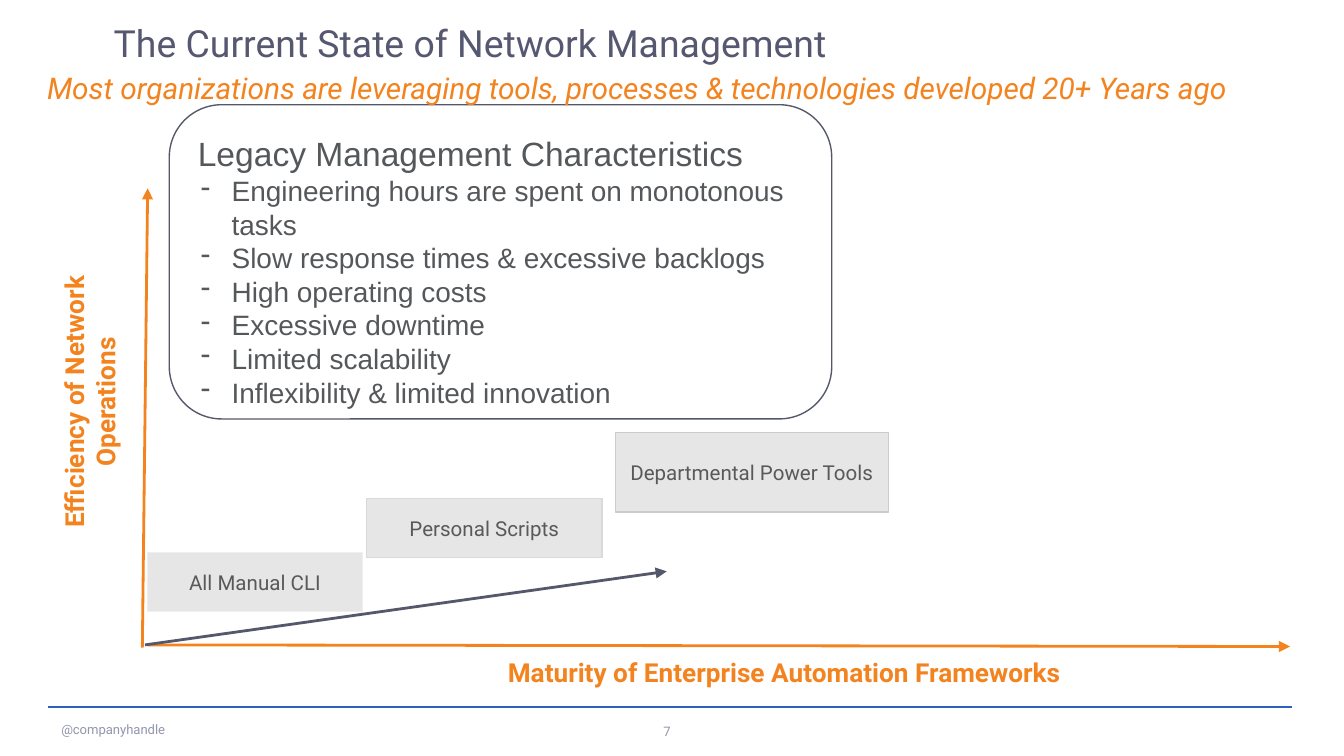
from dataclasses import dataclass

from lxml.etree import SubElement
from pptx import Presentation
from pptx.dml.color import RGBColor
from pptx.enum.shapes import MSO_CONNECTOR as Connector, MSO_SHAPE as Shape
from pptx.enum.text import MSO_ANCHOR as Anchor, PP_ALIGN as Align
from pptx.oxml.ns import qn
from pptx.util import Cm, Pt


@dataclass(frozen=True)
class Theme:
    heading_font: str = "Roboto"
    list_font: str = "Arial"
    slate: str = "55586A"
    title: str = "555870"
    orange: str = "F3831E"
    rule: str = "2E60BD"
    footer: str = "9296AE"
    stage_fill: str = "E7E6E6"
    stage_text: str = "595959"
    list_text: str = "55585B"
    title_size: float = 20
    subtitle_size: float = 16
    list_title_size: float = 18
    list_size: float = 15
    axis_size: float = 14
    stage_size: float = 11
    footer_size: float = 7


THEME = Theme()

STAGES = [
    ("All Manual CLI", (2.79, 10.44, 4.06, 1.12), "EFEFEF"),
    ("Personal Scripts", (6.93, 9.42, 4.45, 1.12), "D9D9D9"),
    ("Departmental Power Tools", (11.63, 8.18, 5.16, 1.5), "CCCCCC"),
]
LEGACY_TRAITS = [
    "Engineering hours are spent on monotonous tasks",
    "Slow response times & excessive backlogs",
    "High operating costs",
    "Excessive downtime",
    "Limited scalability",
    "Inflexibility & limited innovation",
]


def rgb(color):
    return RGBColor.from_string(color)


def set_frame(frame, side, top, anchor=Anchor.TOP):
    frame.word_wrap = True
    frame.margin_left = frame.margin_right = Cm(side)
    frame.margin_top = frame.margin_bottom = Cm(top)
    frame.vertical_anchor = anchor


def style(paragraph, size, color, font=THEME.heading_font, bold=False, italic=False):
    for run in paragraph.runs:
        run.font.name = font
        run.font.size = Pt(size)
        run.font.bold = bold
        run.font.italic = italic
        run.font.color.rgb = rgb(color)


def add_label(slide, text, box, size, color, side=0.25, top=0.13, anchor=Anchor.TOP,
              align=Align.LEFT, spacing=1.0, **emphasis):
    label = slide.shapes.add_textbox(*map(Cm, box))
    set_frame(label.text_frame, side, top, anchor)
    paragraph = label.text_frame.paragraphs[0]
    paragraph.text = text
    paragraph.alignment = align
    paragraph.line_spacing = spacing
    style(paragraph, size, color, **emphasis)
    return label


def add_axis_title(slide, text, box, rotation=0):
    label = add_label(slide, text, box, THEME.axis_size, THEME.orange,
                      side=0.18, top=0.18, align=Align.CENTER, bold=True)
    label.rotation = rotation


def add_line(slide, start, end, color, width, arrow=True):
    line = slide.shapes.add_connector(Connector.STRAIGHT, *map(Cm, start + end))
    line.line.color.rgb = rgb(color)
    line.line.width = Pt(width)
    if arrow:
        SubElement(line.line._get_or_add_ln(), qn("a:tailEnd"), type="triangle")
    SubElement(line._element.spPr, qn("a:effectLst"))


def add_panel(slide, kind, box, outline):
    panel = slide.shapes.add_shape(kind, *map(Cm, box))
    panel.shadow.inherit = False
    panel.line.color.rgb = rgb(outline)
    panel.line.width = Pt(0.75)
    return panel


def add_stage(slide, name, box, outline):
    stage = add_panel(slide, Shape.RECTANGLE, box, outline)
    stage.fill.solid()
    stage.fill.fore_color.rgb = rgb(THEME.stage_fill)
    set_frame(stage.text_frame, 0.18, 0.18, Anchor.MIDDLE)
    paragraph = stage.text_frame.paragraphs[0]
    paragraph.text = name
    paragraph.alignment = Align.CENTER
    style(paragraph, THEME.stage_size, THEME.stage_text)


def add_dash(paragraph):
    properties = paragraph._p.get_or_add_pPr()
    properties.set("marL", str(Cm(0.64)))
    properties.set("indent", str(Cm(-0.58)))
    bullet_color = SubElement(properties, qn("a:buClr"))
    SubElement(bullet_color, qn("a:srgbClr"), val=THEME.list_text)
    SubElement(properties, qn("a:buChar"), char="-")


def add_legacy_panel(slide, heading, traits, box):
    panel = add_panel(slide, Shape.ROUNDED_RECTANGLE, box, THEME.slate)
    panel.fill.background()
    frame = panel.text_frame
    set_frame(frame, 0.25, 0.25)
    frame.text = "\n".join([heading, *traits])
    for index, paragraph in enumerate(frame.paragraphs):
        paragraph.alignment = Align.LEFT
        if index:
            add_dash(paragraph)
        size = THEME.list_size if index else THEME.list_title_size
        style(paragraph, size, THEME.list_text, THEME.list_font)


def add_footer(slide, handle, number):
    add_line(slide, (0.91, 13.36), (24.41, 13.36), THEME.rule, 1, arrow=False)
    for text, box in [(handle, (0.91, 13.51, 3.96, 0.56)),
                      (number, (12.29, 13.54, 0.81, 0.56))]:
        add_label(slide, text, box, THEME.footer_size, THEME.footer)


def main():
    deck = Presentation()
    deck.slide_width, deck.slide_height = Cm(25.4), Cm(14.29)
    slide = deck.slides.add_slide(deck.slide_layouts[6])

    add_footer(slide, "@companyhandle", "7")
    add_label(slide, "The Current State of Network Management", (1.9, 0.36, 22.5, 0.99),
              THEME.title_size, THEME.title, anchor=Anchor.MIDDLE, spacing=0.9)
    for stage in STAGES:
        add_stage(slide, *stage)
    add_line(slide, (2.79, 12.19), (24.38, 12.22), THEME.orange, 1.5)
    add_line(slide, (2.69, 12.24), (2.79, 3.56), THEME.orange, 1.5)
    add_axis_title(slide, "Maturity of Enterprise Automation Frameworks",
                   (7.42, 12.22, 14.81, 1.57))
    add_axis_title(slide, "Efficiency of Network Operations",
                   (-1.02, 6.81, 5.44, 1.57), rotation=270)
    add_line(slide, (2.74, 12.19), (12.6, 10.8), THEME.slate, 1.5)
    add_legacy_panel(slide, "Legacy Management Characteristics", LEGACY_TRAITS,
                     (3.2, 1.98, 12.52, 5.94))
    add_label(slide, "Most organizations are leveraging tools, processes & technologies "
              "developed 20+ Years ago", (0.64, 1.27, 23.5, 0.71),
              THEME.subtitle_size, THEME.orange, spacing=0.9, italic=True)
    deck.save("out.pptx")


if __name__ == "__main__":
    main()
